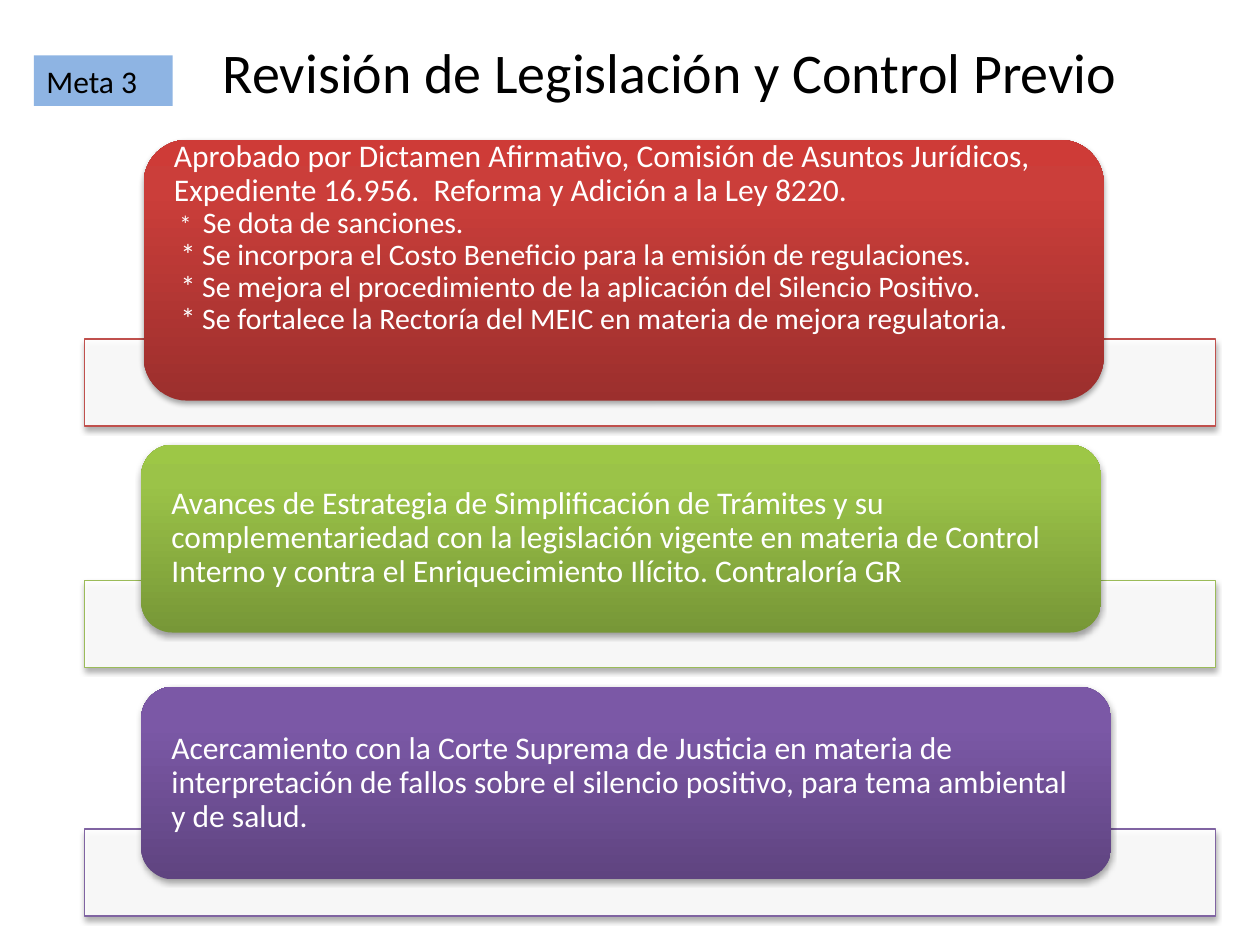
from pptx import Presentation
from pptx.dml.color import RGBColor
from pptx.enum.shapes import MSO_SHAPE
from pptx.enum.text import MSO_ANCHOR, MSO_AUTO_SIZE, PP_ALIGN
from pptx.oxml import parse_xml
from pptx.oxml.ns import nsdecls, qn
from pptx.util import Inches, Pt

BLACK = RGBColor(0x00, 0x00, 0x00)
WHITE = RGBColor(0xFF, 0xFF, 0xFF)
LIGHT_BLUE = RGBColor(0x8E, 0xB4, 0xE3)
RED = RGBColor(0xC0, 0x50, 0x4D)
GREEN = RGBColor(0x9B, 0xBB, 0x59)
PURPLE = RGBColor(0x80, 0x64, 0xA2)
RED_SHADES = [RGBColor(0x9C, 0x2F, 0x2D), RGBColor(0xCB, 0x3E, 0x3A), RGBColor(0xCE, 0x3B, 0x37)]
GREEN_SHADES = [RGBColor(0x77, 0x97, 0x37), RGBColor(0x9B, 0xC3, 0x48), RGBColor(0x9D, 0xC7, 0x46)]
PURPLE_SHADES = [RGBColor(0x5F, 0x44, 0x80), RGBColor(0x7B, 0x58, 0xA6), RGBColor(0x7C, 0x57, 0xA8)]


def add_run(paragraph, text, size, color):
    run = paragraph.add_run()
    run.text = text
    for name, value in {"name": "Calibri", "size": Pt(size)}.items():
        setattr(run.font, name, value)
    run.font.color.rgb = color


def add_shadow(shape):
    shape.shadow.inherit = False
    shape._element.spPr.find(qn("a:effectLst")).append(parse_xml(
        f'<a:outerShdw {nsdecls("a")} blurRad="{Pt(3.1)}" dist="{Pt(1.8)}" dir="5400000" '
        'rotWithShape="0"><a:srgbClr val="000000"><a:alpha val="35000"/></a:srgbClr></a:outerShdw>'))


presentation = Presentation()
presentation.slide_width, presentation.slide_height = Inches(10), Inches(7.5)
slide = presentation.slides.add_slide(presentation.slide_layouts[5])

# Title
title = slide.shapes.title
for name, value in {"left": 1.38, "top": 0.21, "width": 7.88, "height": 0.71}.items():
    setattr(title, name, Inches(value))
title.text_frame.vertical_anchor = MSO_ANCHOR.MIDDLE
title.text_frame.auto_size = MSO_AUTO_SIZE.NONE
title_paragraph = title.text_frame.paragraphs[0]
title_paragraph.alignment = PP_ALIGN.CENTER
add_run(title_paragraph, "Revisión de Legislación y Control Previo", 32, BLACK)

# Goal label
label = slide.shapes.add_shape(MSO_SHAPE.RECTANGLE, Inches(0.27), Inches(0.44), Inches(1.1), Inches(0.4))
label.shadow.inherit = False
label.fill.solid()
label.fill.fore_color.rgb = LIGHT_BLUE
label.line.fill.background()
label.text_frame.vertical_anchor = MSO_ANCHOR.TOP
label.text_frame.paragraphs[0].alignment = PP_ALIGN.LEFT
add_run(label.text_frame.paragraphs[0], "Meta 3", 18, BLACK)

# Each paragraph is a list of lines, each line a list of (text, size)
reform = [
    [[("Aprobado por Dictamen Afirmativo, Comisión de Asuntos Jurídicos,  "
       "Expediente 16.956.  Reforma y Adición a la Ley 8220.", 18)],
     [(" *  ", 14), ("Se dota de sanciones.", 17)]],
    [[(" * Se incorpora el Costo Beneficio para la emisión de regulaciones.", 17)],
     [(" * Se mejora el procedimiento de la aplicación del Silencio Positivo.", 17)],
     [(" * Se fortalece la Rectoría del MEIC en materia de mejora regulatoria.", 17)]],
]
strategy = [[[("Avances de Estrategia de Simplificación de Trámites y su complementariedad con la "
               "legislación vigente en materia de Control Interno y contra el Enriquecimiento "
               "Ilícito. Contraloría GR", 18)]]]
court = [[[("Acercamiento con la Corte Suprema de Justicia en materia de interpretación de fallos "
            "sobre el silencio positivo, para tema ambiental y de salud.", 18)]]]

# Bar top, bar colour, card box, card shades, anchor, right inset, text
sections = [
    (2.69, RED, (1.14, 1.11, 7.62, 2.07), RED_SHADES, MSO_ANCHOR.TOP, 0, reform),
    (4.61, GREEN, (1.12, 3.53, 7.62, 1.49), GREEN_SHADES, MSO_ANCHOR.MIDDLE, 0.24, strategy),
    (6.58, PURPLE, (1.12, 5.45, 7.7, 1.53), PURPLE_SHADES, MSO_ANCHOR.MIDDLE, 0.24, court),
]

for bar_top, color, card_box, shades, anchor, right_inset, paragraphs in sections:
    # Translucent bar behind the card
    bar = slide.shapes.add_shape(MSO_SHAPE.RECTANGLE, Inches(0.67), Inches(bar_top), Inches(8.98), Inches(0.69))
    bar.fill.solid()
    bar.fill.fore_color.rgb = WHITE
    bar_color = bar._element.spPr.find(qn("a:solidFill"))[0]
    bar_color.append(parse_xml(f'<a:alpha {nsdecls("a")} val="90000"/>'))
    bar.line.color.rgb = color
    bar.line.width = Pt(0.75)
    add_shadow(bar)

    # Card, dark at the bottom
    box = [Inches(value) for value in card_box]
    card = slide.shapes.add_shape(MSO_SHAPE.ROUNDED_RECTANGLE, *box)
    stops = "".join(f'<a:gs pos="{position}"><a:srgbClr val="{shade}"/></a:gs>'
                    for position, shade in zip((0, 80000, 100000), shades))
    card._element.spPr.find(qn("a:prstGeom")).addnext(parse_xml(
        f'<a:gradFill {nsdecls("a")} rotWithShape="1"><a:gsLst>{stops}</a:gsLst>'
        '<a:lin ang="16200000" scaled="0"/></a:gradFill>'))
    card.line.fill.background()
    add_shadow(card)

    # Card text
    text_frame = slide.shapes.add_textbox(*box).text_frame
    text_format = {"word_wrap": True, "vertical_anchor": anchor, "margin_left": Inches(0.24),
                   "margin_right": Inches(right_inset), "margin_top": 0, "margin_bottom": 0}
    for name, value in text_format.items():
        setattr(text_frame, name, value)
    for index, lines in enumerate(paragraphs):
        paragraph = text_frame.add_paragraph() if index else text_frame.paragraphs[0]
        paragraph.line_spacing = 0.9
        for line_index, line in enumerate(lines):
            if line_index:
                paragraph.add_line_break()
            for text, size in line:
                add_run(paragraph, text, size, WHITE)

presentation.save("out.pptx")
